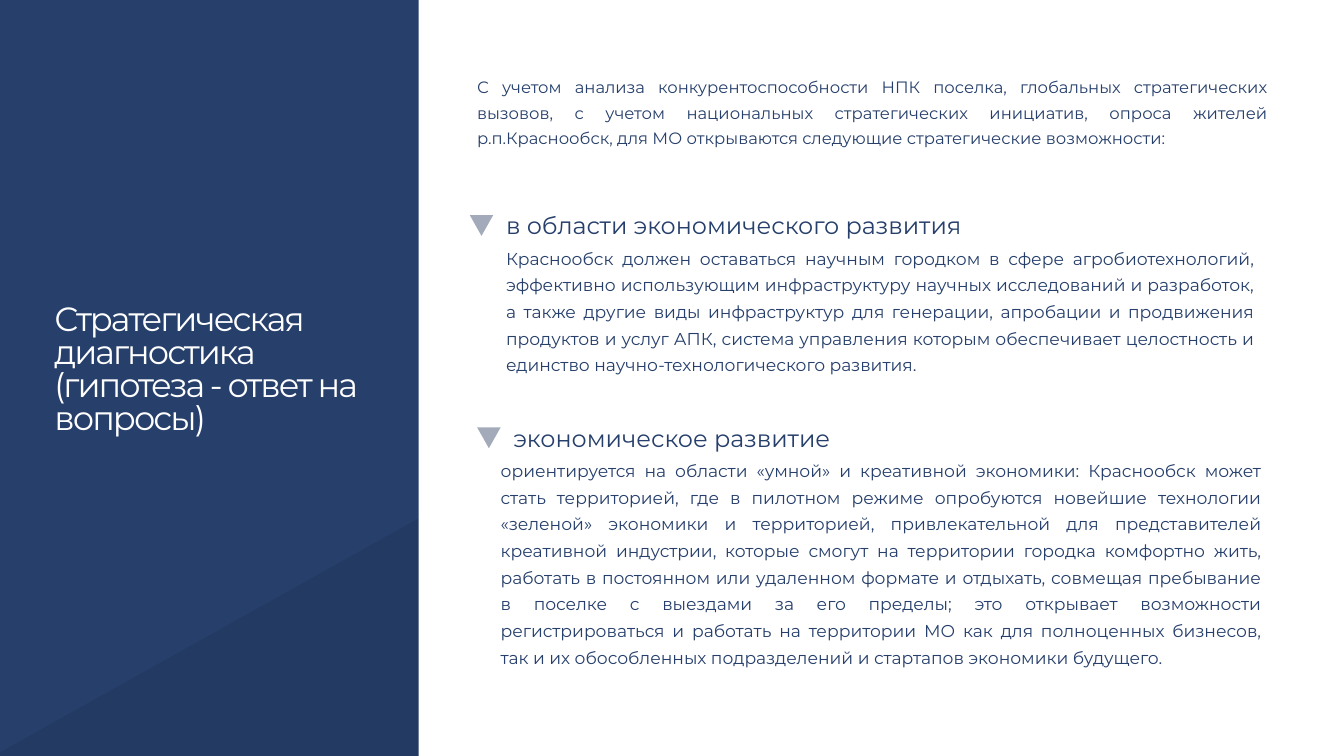
from lxml import etree
from pptx import Presentation
from pptx.dml.color import RGBColor
from pptx.enum.shapes import MSO_SHAPE
from pptx.enum.text import MSO_ANCHOR, MSO_AUTO_SIZE, PP_ALIGN
from pptx.oxml.ns import qn
from pptx.util import Pt

RECTANGLE = MSO_SHAPE.RECTANGLE
TOP = MSO_ANCHOR.TOP
NO_AUTOFIT = MSO_AUTO_SIZE.NONE
LEFT = PP_ALIGN.LEFT
JUSTIFY = PP_ALIGN.JUSTIFY

NAVY = RGBColor(0x26, 0x3F, 0x6B)
MARKER = RGBColor(0x21, 0x35, 0x59)
BLACK = RGBColor(0, 0, 0)
WHITE = RGBColor(0xFF, 0xFF, 0xFF)
FONT = "Montserrat"

TITLE = ["Стратегическая диагностика", "(гипотеза - ответ на вопросы)"]
INTRO = (
    "С учетом анализа конкурентоспособности НПК поселка, глобальных стратегических "
    "вызовов, с учетом национальных стратегических инициатив, опроса жителей "
    "р.п.Краснообск, для МО открываются следующие стратегические возможности:"
)
SCIENCE_TOWN = (
    "Краснообск должен оставаться научным городком в сфере агробиотехнологий, "
    "эффективно использующим инфраструктуру научных исследований и разработок, "
    "а также другие виды инфраструктур для генерации, апробации и продвижения "
    "продуктов и услуг АПК, система управления которым обеспечивает целостность и "
    "единство научно-технологического развития."
)
SMART_ECONOMY = (
    "ориентируется на области «умной» и креативной экономики: Краснообск может "
    "стать территорией, где в пилотном режиме опробуются новейшие технологии "
    "«зеленой» экономики и территорией, привлекательной для представителей "
    "креативной индустрии, которые смогут на территории городка комфортно жить, "
    "работать в постоянном или удаленном формате и отдыхать, совмещая пребывание "
    "в поселке с выездами за его пределы; это открывает возможности "
    "регистрироваться и работать на территории МО как для полноценных бизнесов, "
    "так и их обособленных подразделений и стартапов экономики будущего."
)


def paint(shape, color, opacity=100):
    shape.shadow.inherit = False
    shape.fill.solid()
    shape.fill.fore_color.rgb = color
    shape.line.fill.background()
    if opacity < 100:
        color_element = shape.element.spPr.find(".//" + qn("a:srgbClr"))
        etree.SubElement(color_element, qn("a:alpha"), val=str(opacity * 1000))


def write_text(shape, paragraphs, *, size, line_spacing, color=NAVY,
               alignment=JUSTIFY, tracking=0):
    frame = shape.text_frame
    frame.word_wrap = True
    frame.auto_size = NO_AUTOFIT
    frame.vertical_anchor = TOP
    frame.margin_left = frame.margin_right = frame.margin_top = frame.margin_bottom = 0
    for index, text in enumerate(paragraphs):
        paragraph = frame.add_paragraph() if index else frame.paragraphs[0]
        paragraph.alignment = alignment
        paragraph.line_spacing = Pt(line_spacing)
        run = paragraph.add_run()
        run.text = text
        run.font.name = FONT
        run.font.size = Pt(size)
        run.font.color.rgb = color
        if tracking:
            run.font._element.set("spc", str(round(tracking * 100)))


def add_text(slide, text, left, top, width, height, **text_format):
    box = slide.shapes.add_textbox(Pt(left), Pt(top), Pt(width), Pt(height))
    write_text(box, [text], **text_format)


def add_backdrop(slide):
    slide.background.fill.solid()
    slide.background.fill.fore_color.rgb = NAVY
    band = slide.shapes.add_shape(RECTANGLE, Pt(-87.8), Pt(342.7), Pt(2030.4), Pt(754.6))
    band.rotation = 330.8
    paint(band, BLACK, opacity=7)
    panel = slide.shapes.add_shape(RECTANGLE, Pt(448.6), Pt(-53.3), Pt(1447.2), Pt(894.2))
    paint(panel, WHITE)


def place_title(slide, left, top, width, height):
    title = slide.shapes.title
    title.left, title.top, title.width, title.height = Pt(left), Pt(top), Pt(width), Pt(height)
    write_text(title, TITLE, size=36, line_spacing=35.3, color=WHITE,
               alignment=LEFT, tracking=-2.1)


def add_marker(slide, left, top, width, height):
    builder = slide.shapes.build_freeform(Pt(left), Pt(top))
    builder.add_line_segments([
        (Pt(left + width), Pt(top)),
        (Pt(left + width / 2), Pt(top + height)),
    ], close=True)
    paint(builder.convert_to_shape(), MARKER, opacity=41)


def add_section(slide, heading, body, left, top, body_indent, body_width, body_height):
    add_marker(slide, left, top + 13.7, 25.2, 22.3)
    add_text(slide, heading, left + 38.9, top, 537.8, 37.4, size=25.6, line_spacing=39.9)
    add_text(slide, body, left + body_indent, top + 42.5, body_width, body_height,
             size=18.4, line_spacing=28.6)


def main():
    presentation = Presentation()
    presentation.slide_width = Pt(1440)
    presentation.slide_height = Pt(810)
    slide = presentation.slides.add_slide(presentation.slide_layouts[5])
    add_backdrop(slide)
    place_title(slide, 58.3, 326.9, 376.6, 213.1)
    add_text(slide, INTRO, 511.2, 76.3, 847.4, 101.5, size=17.6, line_spacing=27.4)
    add_section(slide, "в области экономического развития", SCIENCE_TOWN,
                503.3, 216.7, 38.9, 801.4, 169.9)
    add_section(slide, "экономическое развитие", SMART_ECONOMY,
                511.2, 444.2, 25.2, 815, 283.7)
    presentation.save("out.pptx")


if __name__ == "__main__":
    main()
